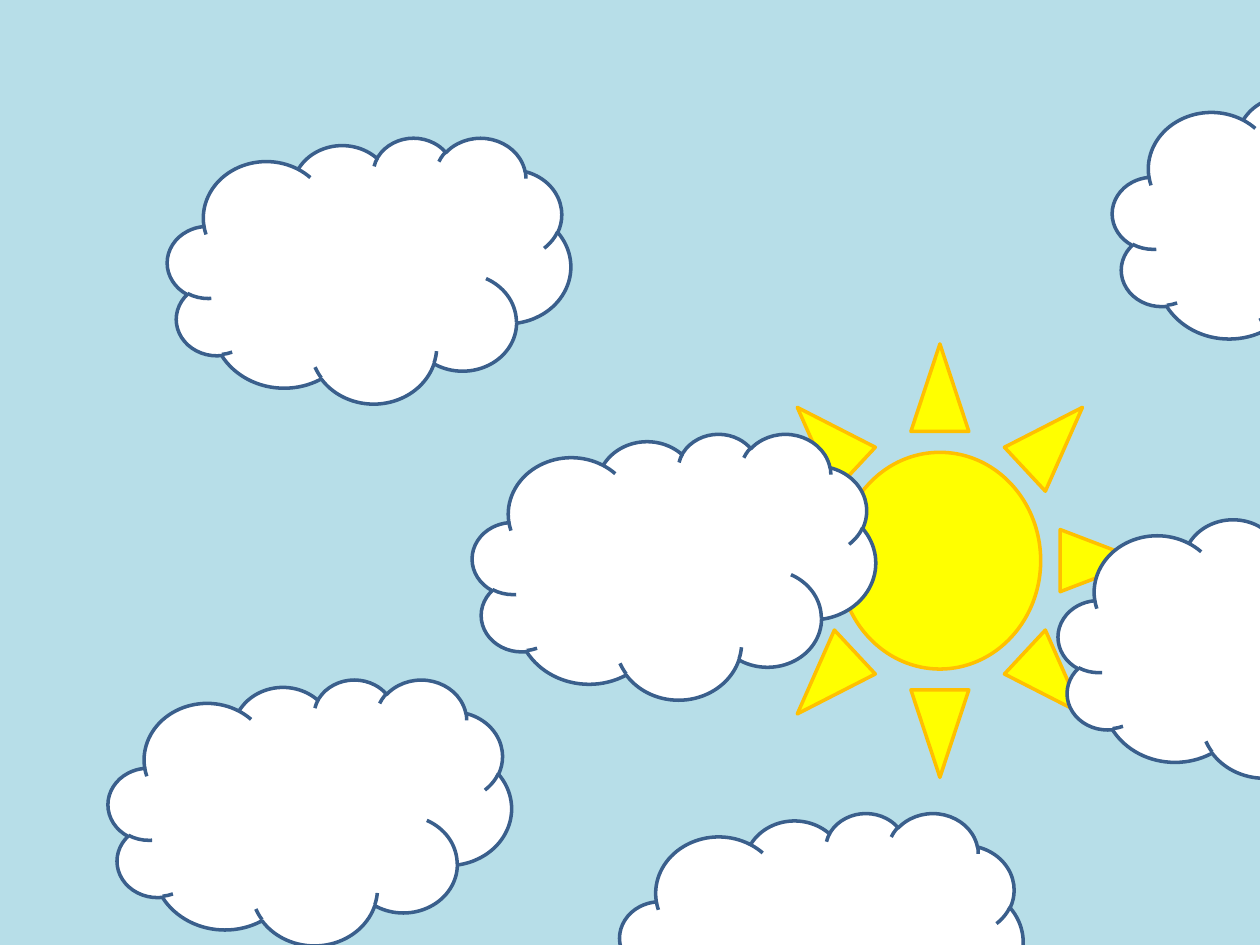
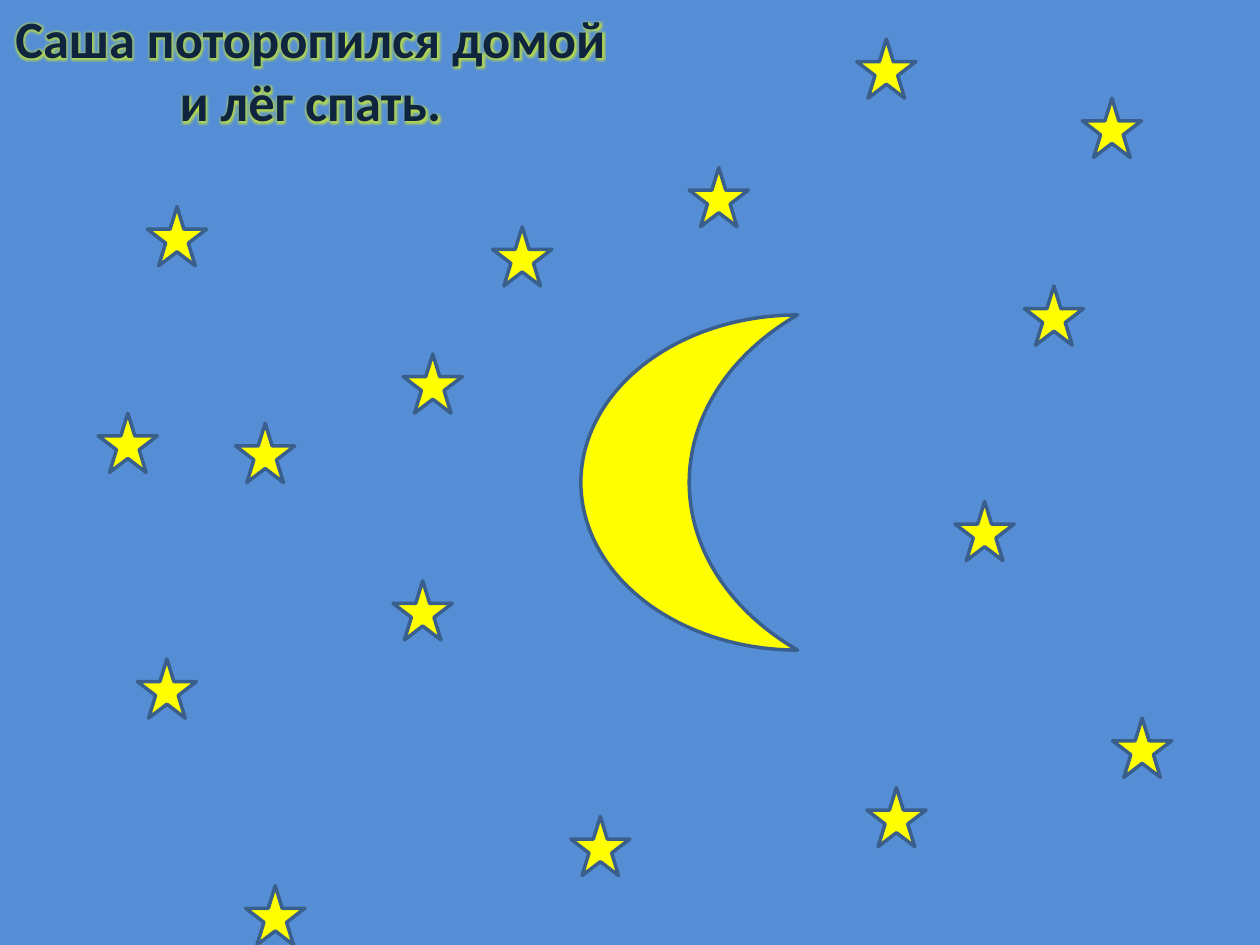
from dataclasses import dataclass

from lxml import etree
from pptx import Presentation
from pptx.dml.color import RGBColor
from pptx.enum.shapes import MSO_SHAPE
from pptx.enum.text import MSO_ANCHOR, MSO_AUTO_SIZE, PP_ALIGN
from pptx.oxml.ns import qn
from pptx.util import Inches, Pt

SUN = MSO_SHAPE.SUN
CLOUD = MSO_SHAPE.CLOUD
MOON = MSO_SHAPE.MOON
STAR = MSO_SHAPE.STAR_5_POINT
CENTER = PP_ALIGN.CENTER
TOP = MSO_ANCHOR.TOP
FIT = MSO_AUTO_SIZE.SHAPE_TO_FIT_TEXT
TITLE_ONLY, BLANK = 5, 6


@dataclass(frozen=True)
class Theme:
    day: str = "B7DEE8"
    night: str = "558ED5"
    light: str = "FFFF00"
    ray: str = "FFC000"
    cloud: str = "FFFFFF"
    edge: str = "3A5F8C"
    ink: str = "0F243E"
    rim: str = "0D0D0D"
    glow: str = "C8E632"
    font: str = "Calibri"
    title: float = 30
    line: float = 2
    rim_line: float = 0.75
    glow_size: float = 4


THEME = Theme()
CLOUD_SIZE = (3.2, 2.11)
STAR_SIZE = (0.47, 0.47)

CLOUDS = [(8.83, 0.7), (4.92, 6.45), (8.4, 4.06),
          (3.75, 3.44), (1.33, 1.09), (0.86, 5.39)]
STARS = [(5.47, 1.33), (1.87, 3.36), (3.12, 4.61), (1.17, 1.64),
         (0.78, 3.28), (3.2, 2.81), (1.09, 5.23), (4.53, 6.48),
         (1.95, 7.03), (8.59, 0.78), (7.58, 3.98), (6.8, 0.31),
         (8.83, 5.7), (8.13, 2.27), (6.88, 6.25), (3.91, 1.8)]


def rgb(color):
    return RGBColor.from_string(color)


def add_sky(deck, layout, color):
    slide = deck.slides.add_slide(deck.slide_layouts[layout])
    fill = slide.background.fill
    fill.solid()
    fill.fore_color.rgb = rgb(color)
    return slide


def add_form(slide, kind, spot, size, fill, edge=THEME.edge):
    form = slide.shapes.add_shape(kind, *map(Inches, spot + size))
    form.shadow.inherit = False
    form.fill.solid()
    form.fill.fore_color.rgb = rgb(fill)
    form.line.color.rgb = rgb(edge)
    form.line.width = Pt(THEME.line)


def add_color(parent, color):
    return etree.SubElement(parent, qn("a:srgbClr"), val=color)


def add_glow(run):
    """Give the letters a thin dark rim and a soft halo."""
    props = run.font._element if hasattr(run.font, "_element") else run._r.get_or_add_rPr()
    rim = etree.Element(qn("a:ln"), w=str(Pt(THEME.rim_line)))
    add_color(etree.SubElement(rim, qn("a:solidFill")), THEME.rim)
    fill = etree.Element(qn("a:solidFill"))
    add_color(fill, THEME.ink)
    halo = etree.Element(qn("a:effectLst"))
    glow = etree.SubElement(halo, qn("a:glow"), rad=str(Pt(THEME.glow_size)))
    etree.SubElement(add_color(glow, THEME.glow), qn("a:alpha"), val="80000")
    for place, part in enumerate((rim, fill, halo)):
        props.insert(place, part)


def set_title(slide, text, spot, size):
    title = slide.shapes.title
    title.left, title.top, title.width, title.height = map(Inches, spot + size)
    frame = title.text_frame
    frame.text = text
    frame.word_wrap = False
    frame.auto_size = FIT
    frame.vertical_anchor = TOP
    for para in frame.paragraphs:
        para.alignment = CENTER
        para.font.name = THEME.font
        para.font.size = Pt(THEME.title)
        para.font.bold = True
        for run in para.runs:
            add_glow(run)


def draw_day(deck):
    slide = add_sky(deck, BLANK, THEME.day)
    add_form(slide, SUN, (5.86, 2.73), (3.2, 3.44), THEME.light, THEME.ray)
    for spot in CLOUDS:
        add_form(slide, CLOUD, spot, CLOUD_SIZE, THEME.cloud)


def draw_night(deck):
    slide = add_sky(deck, TITLE_ONLY, THEME.night)
    set_title(slide, "Саша поторопился домой\nи лёг спать.", (0, 0), (4.93, 1.11))
    add_form(slide, MOON, (4.61, 2.5), (1.72, 2.66), THEME.light)
    for spot in STARS:
        add_form(slide, STAR, spot, STAR_SIZE, THEME.light)


def main():
    deck = Presentation()
    deck.slide_width, deck.slide_height = Inches(10), Inches(7.5)
    draw_day(deck)
    draw_night(deck)
    deck.save("out.pptx")


if __name__ == "__main__":
    main()
